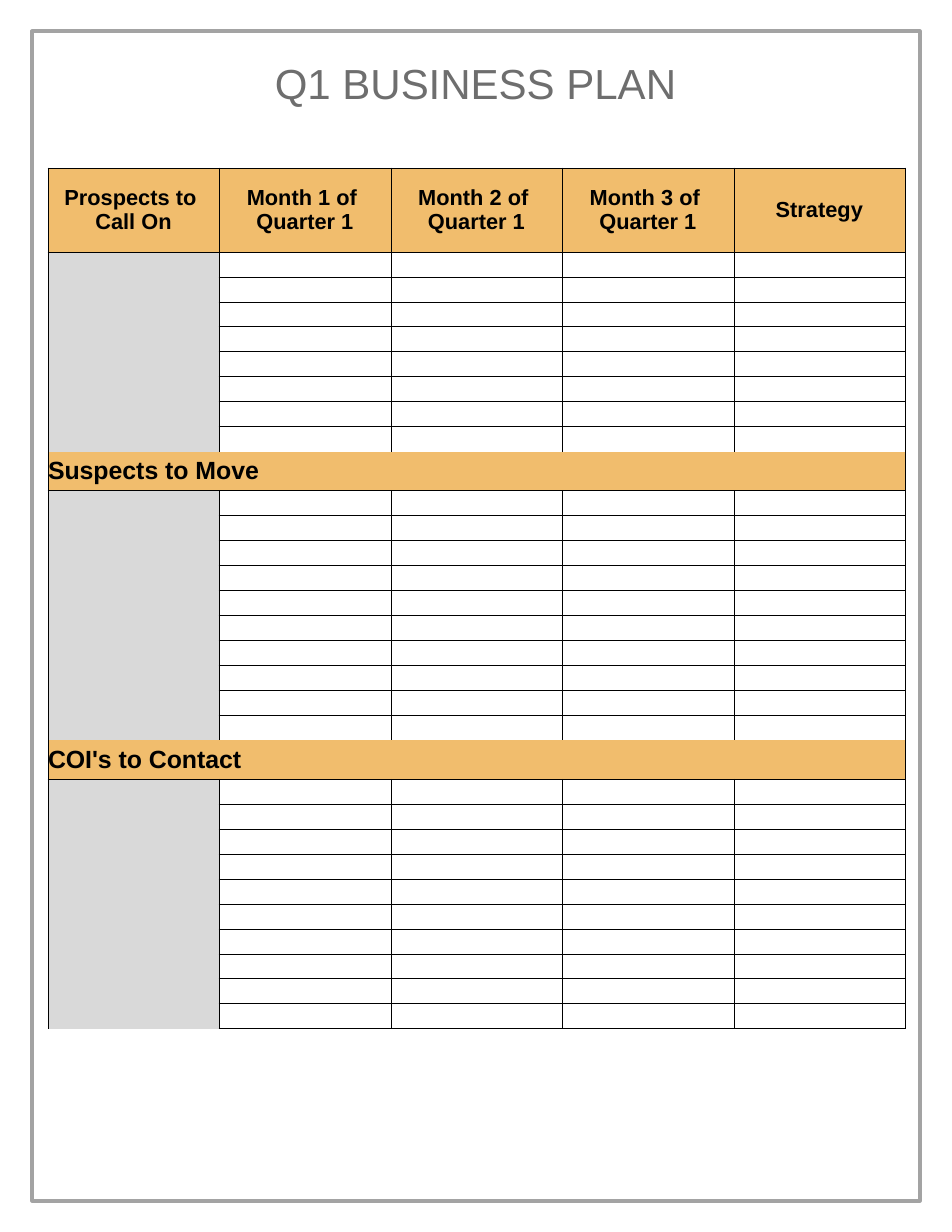
import dataclasses

import lxml.etree
import pptx
import pptx.dml.color
import pptx.enum.shapes
import pptx.enum.text
import pptx.oxml.ns
import pptx.slide
import pptx.table
import pptx.text.text
import pptx.util

PX = 914400 // 112
FONT = "Arial"
COLORS = {
    "frame": "A3A3A3",
    "title": "6E6E6E",
    "band": "F1BD6D",
    "side": "D9D9D9",
    "ink": "000000",
}
HEADS = [
    "Prospects to \vCall On",
    "Month 1 of \vQuarter 1",
    "Month 2 of \vQuarter 1",
    "Month 3 of \vQuarter 1",
    "Strategy",
]
LEFT, TOP, WIDTH = 48, 168, 857
HEAD, BAND, ROW = 84, 39, 25
ALIGN = pptx.enum.text.PP_ALIGN


@dataclasses.dataclass
class Part:
    label: str
    count: int


# The first part is labelled by the header row
PARTS = [Part("", 8), Part("Suspects to Move", 10), Part("COI's to Contact", 10)]


def px(size: int) -> pptx.util.Emu:
    return pptx.util.Emu(size * PX)


def rgb(name: str) -> pptx.dml.color.RGBColor:
    return pptx.dml.color.RGBColor.from_string(COLORS[name])


def write(frame: pptx.text.text.TextFrame, text: str, size: int, color: str,
          bold: bool = False, align: ALIGN = ALIGN.CENTER) -> None:
    para = frame.paragraphs[0]
    para.text = text
    para.alignment = align
    font = para.font
    font.name, font.size, font.bold = FONT, pptx.util.Pt(size), bold
    font.color.rgb = rgb(color)


def edge(cell: pptx.table._Cell, sides: str) -> None:
    """Draw the named sides of a cell and clear the others."""
    props = cell._tc.get_or_add_tcPr()
    for side in "LRTB":
        line = lxml.etree.SubElement(props, pptx.oxml.ns.qn(f"a:ln{side}"), w="6350")
        if side in sides:
            fill = lxml.etree.SubElement(line, pptx.oxml.ns.qn("a:solidFill"))
            lxml.etree.SubElement(fill, pptx.oxml.ns.qn("a:srgbClr"), val=COLORS["ink"])
        else:
            lxml.etree.SubElement(line, pptx.oxml.ns.qn("a:noFill"))


def style(cell: pptx.table._Cell, sides: str, color: str = "") -> None:
    edge(cell, sides)
    cell.margin_left = cell.margin_right = 0
    cell.margin_top = cell.margin_bottom = 0
    cell.vertical_anchor = pptx.enum.text.MSO_ANCHOR.MIDDLE
    if color:
        cell.fill.solid()
        cell.fill.fore_color.rgb = rgb(color)
    else:
        cell.fill.background()


def blank(cell: pptx.table._Cell) -> None:
    """Keep an empty cell from stretching its row."""
    para = cell.text_frame.paragraphs[0]
    lxml.etree.SubElement(para._p, pptx.oxml.ns.qn("a:endParaRPr"), sz="1000")


def draw_band(grid: pptx.table.Table, row: int, label: str) -> None:
    grid.rows[row].height = px(BAND)
    cells = list(grid.rows[row].cells)
    for cell in cells:
        style(cell, "LRB", "band")
    for cell in cells[1:]:
        blank(cell)
    cells[0].merge(cells[-1])
    write(cells[0].text_frame, label, 16, "ink", True, ALIGN.LEFT)


def draw_row(grid: pptx.table.Table, row: int, first: bool, last: bool, end: bool) -> None:
    grid.rows[row].height = px(ROW)
    for col, cell in enumerate(grid.rows[row].cells):
        if col == 0:
            style(cell, "LRT" if first else "LR", "side")
        else:
            style(cell, "LRT" if last and not end else "LRTB")
        blank(cell)


def draw_grid(slide: pptx.slide.Slide) -> None:
    bands = len(PARTS) - 1
    lines = sum(part.count for part in PARTS)
    high = HEAD + bands * BAND + lines * ROW
    grid = slide.shapes.add_table(1 + bands + lines, len(HEADS), px(LEFT), px(TOP),
                                  px(WIDTH), px(high)).table
    grid.first_row = grid.horz_banding = False
    stops = [round(WIDTH * i / len(HEADS)) for i in range(len(HEADS) + 1)]
    for col, (start, stop) in enumerate(zip(stops, stops[1:])):
        grid.columns[col].width = px(stop - start)

    # Header
    grid.rows[0].height = px(HEAD)
    for cell, text in zip(grid.rows[0].cells, HEADS):
        style(cell, "LRTB", "band")
        write(cell.text_frame, text, 14, "ink", True)

    # Parts with their empty lines
    row = 1
    for part in PARTS:
        if part.label:
            draw_band(grid, row, part.label)
            row += 1
        for i in range(part.count):
            draw_row(grid, row, i == 0, i == part.count - 1, part is PARTS[-1])
            row += 1


def main() -> None:
    deck = pptx.Presentation()
    deck.slide_width, deck.slide_height = px(952), px(1232)
    slide = deck.slides.add_slide(deck.slide_layouts[6])

    # Page frame
    frame = slide.shapes.add_shape(pptx.enum.shapes.MSO_SHAPE.RECTANGLE,
                                   px(32), px(31), px(888), px(1170))
    frame.shadow.inherit = False
    frame.fill.background()
    frame.line.color.rgb = rgb("frame")
    frame.line.width = pptx.util.Pt(2)

    # Title
    title = slide.shapes.add_textbox(px(47), px(52), px(857), px(112)).text_frame
    title.word_wrap = True
    write(title, "Q1 BUSINESS PLAN", 27, "title")

    draw_grid(slide)
    deck.save("out.pptx")


if __name__ == "__main__":
    main()
